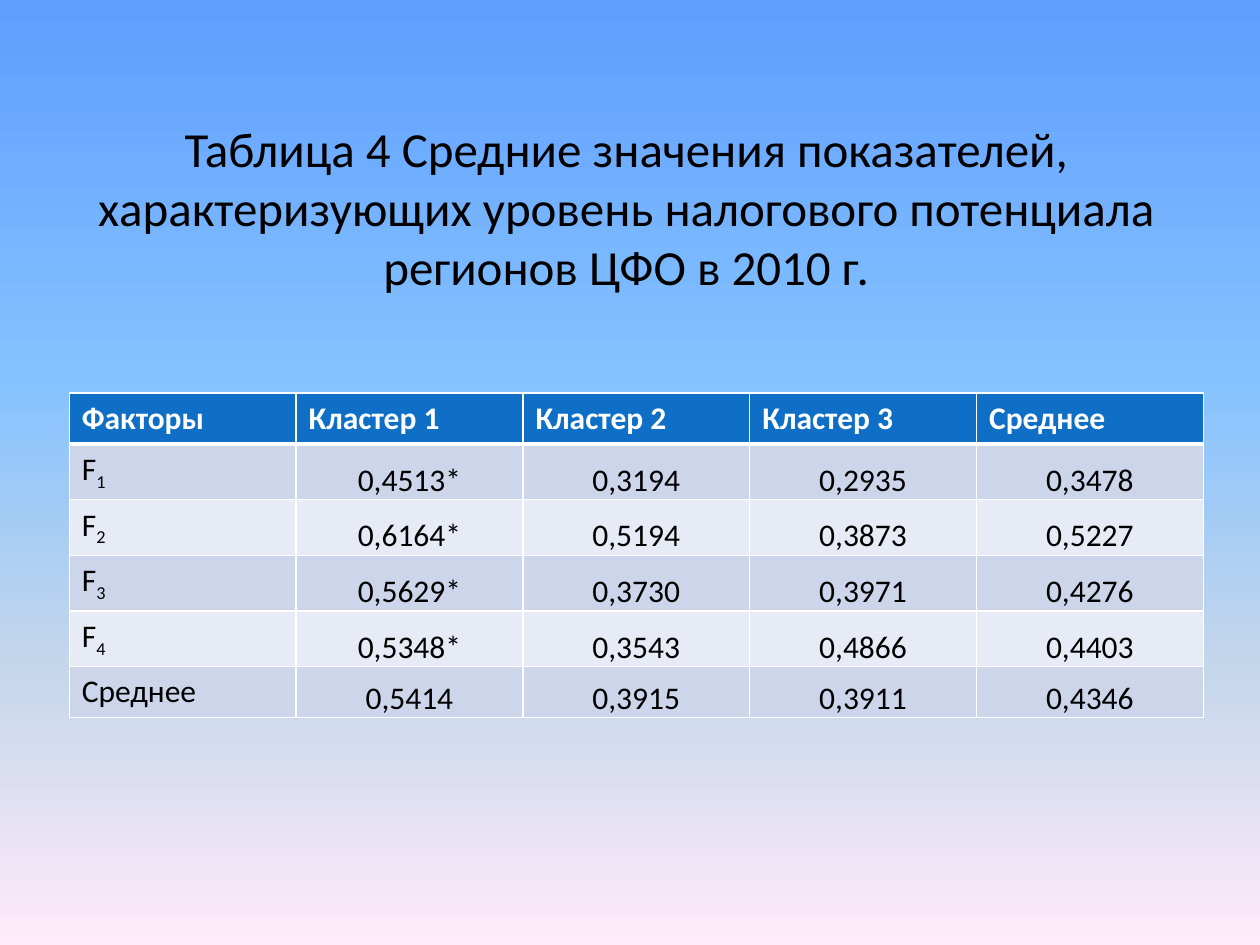
from lxml.etree import SubElement
from pptx import Presentation
from pptx.dml.color import RGBColor
from pptx.enum.text import MSO_ANCHOR as Anchor, PP_ALIGN as Align
from pptx.oxml.ns import qn
from pptx.util import Pt

TITLE = ("Таблица 4 Средние значения показателей, характеризующих уровень "
         "налогового потенциала регионов ЦФО в 2010 г.")
HEADER = ["Факторы", "Кластер 1", "Кластер 2", "Кластер 3", "Среднее"]
# Row label, its subscript, values
ROWS = [
    ("F", "1", ["0,4513*", "0,3194", "0,2935", "0,3478"]),
    ("F", "2", ["0,6164*", "0,5194", "0,3873", "0,5227"]),
    ("F", "3", ["0,5629*", "0,3730", "0,3971", "0,4276"]),
    ("F", "4", ["0,5348*", "0,3543", "0,4866", "0,4403"]),
    ("Среднее", "", ["0,5414", "0,3915", "0,3911", "0,4346"]),
]
COLORS = {"text": "000000", "white": "FFFFFF", "header": "0F6FC6",
          "odd": "CCD5EA", "even": "E7EBF5"}
SKY = [(0, "5E9EFF"), (40, "85C2FF"), (70, "C4D6EB"), (100, "FFEBFA")]
FONT = "Calibri"
COLUMN_WIDTH, ROW_HEIGHT = 129.6, 29.2


def add_span(para, text, size, color="text", bold=False, subscript=False):
    span = para.add_run()
    span.text = text
    span.font.name = FONT
    span.font.size = Pt(size)
    span.font.bold = bold
    span.font.color.rgb = RGBColor.from_string(COLORS[color])
    if subscript:
        span.font._element.set("baseline", "-25000")


def add_solid_line(parent, tag, width):
    line = SubElement(parent, qn(tag), w=str(Pt(width)))
    fill = SubElement(line, qn("a:solidFill"))
    SubElement(fill, qn("a:srgbClr"), val=COLORS["white"])


def style_cell(cell, fill, top=1, bottom=1):
    properties = cell._tc.get_or_add_tcPr()
    for side, width in (("L", 1), ("R", 1), ("T", top), ("B", bottom)):
        add_solid_line(properties, f"a:ln{side}", width)
    cell.fill.solid()
    cell.fill.fore_color.rgb = RGBColor.from_string(COLORS[fill])


def paint_background(page):
    fill = page.background.fill
    fill.gradient()
    fill.gradient_angle = 270
    stops = next(page.element.iter(qn("a:gsLst")))
    for stop in list(stops):
        stops.remove(stop)
    for percent, color in SKY:
        stop = SubElement(stops, qn("a:gs"), pos=str(percent * 1000))
        SubElement(stop, qn("a:srgbClr"), val=color)


def add_title(page):
    box = page.shapes.add_textbox(Pt(33.8), Pt(73.4), Pt(648), Pt(90))
    frame = box.text_frame
    frame.word_wrap = True
    frame.vertical_anchor = Anchor.MIDDLE
    para = frame.paragraphs[0]
    para.alignment = Align.CENTER
    add_span(para, TITLE, 28)


def add_factor_table(page):
    row_count, column_count = len(ROWS) + 1, len(HEADER)
    table = page.shapes.add_table(
        row_count, column_count, Pt(39.6), Pt(224.6),
        Pt(COLUMN_WIDTH * column_count), Pt(ROW_HEIGHT * row_count)).table
    for column in table.columns:
        column.width = Pt(COLUMN_WIDTH)
    for row in table.rows:
        row.height = Pt(ROW_HEIGHT)

    # Header row
    for c, text in enumerate(HEADER):
        cell = table.cell(0, c)
        style_cell(cell, "header", bottom=3)
        add_span(cell.text_frame.paragraphs[0], text, 18, "white", bold=True)

    # Body rows
    for r, (label, index, values) in enumerate(ROWS, start=1):
        band = "odd" if r % 2 else "even"
        top = 3 if r == 1 else 1
        cell = table.cell(r, 0)
        style_cell(cell, band, top)
        para = cell.text_frame.paragraphs[0]
        add_span(para, label, 18)
        if index:
            add_span(para, index, 18, subscript=True)
        for c, value in enumerate(values, start=1):
            cell = table.cell(r, c)
            style_cell(cell, band, top)
            cell.vertical_anchor = Anchor.BOTTOM
            cell.margin_left = cell.margin_right = Pt(5)
            cell.margin_top = cell.margin_bottom = Pt(0)
            para = cell.text_frame.paragraphs[0]
            para.alignment = Align.CENTER
            add_span(para, value, 18)


def main():
    deck = Presentation()
    deck.slide_width, deck.slide_height = Pt(720), Pt(540)
    page = deck.slides.add_slide(deck.slide_layouts[6])
    paint_background(page)
    add_title(page)
    add_factor_table(page)
    deck.save("out.pptx")


if __name__ == "__main__":
    main()
